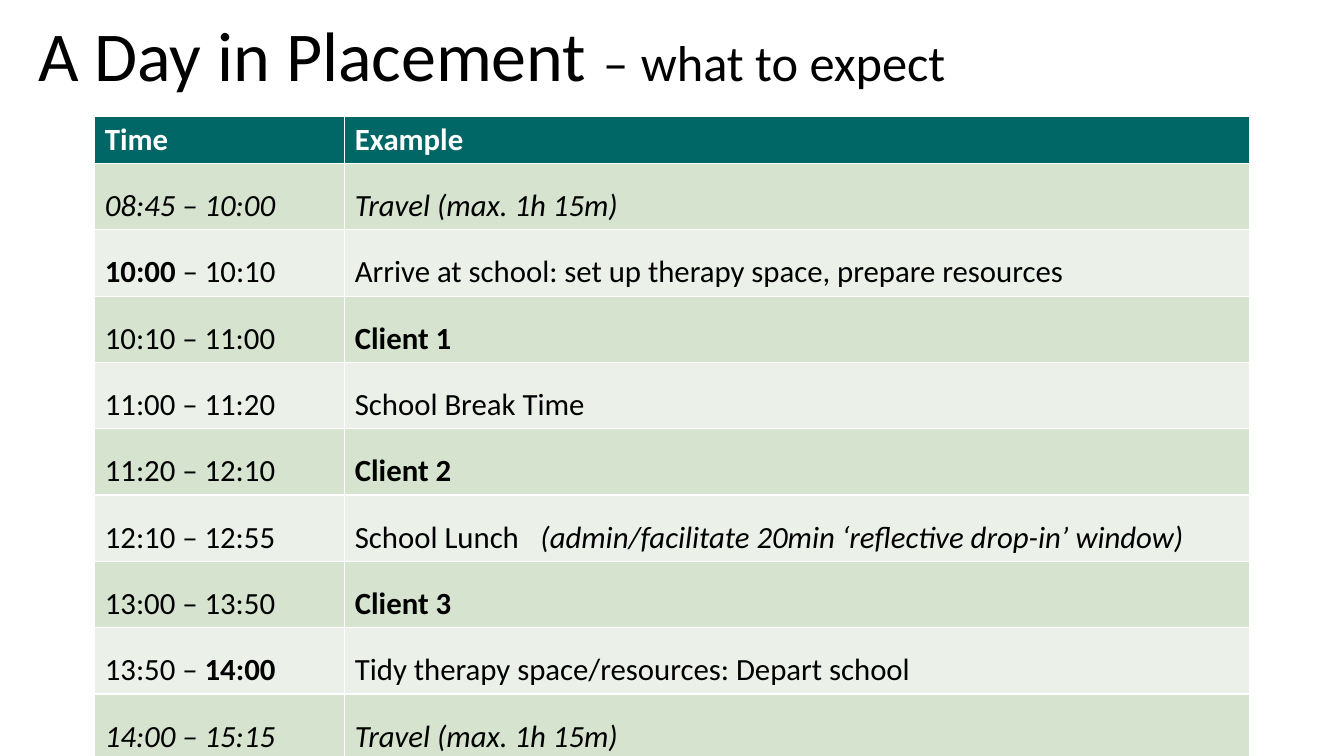
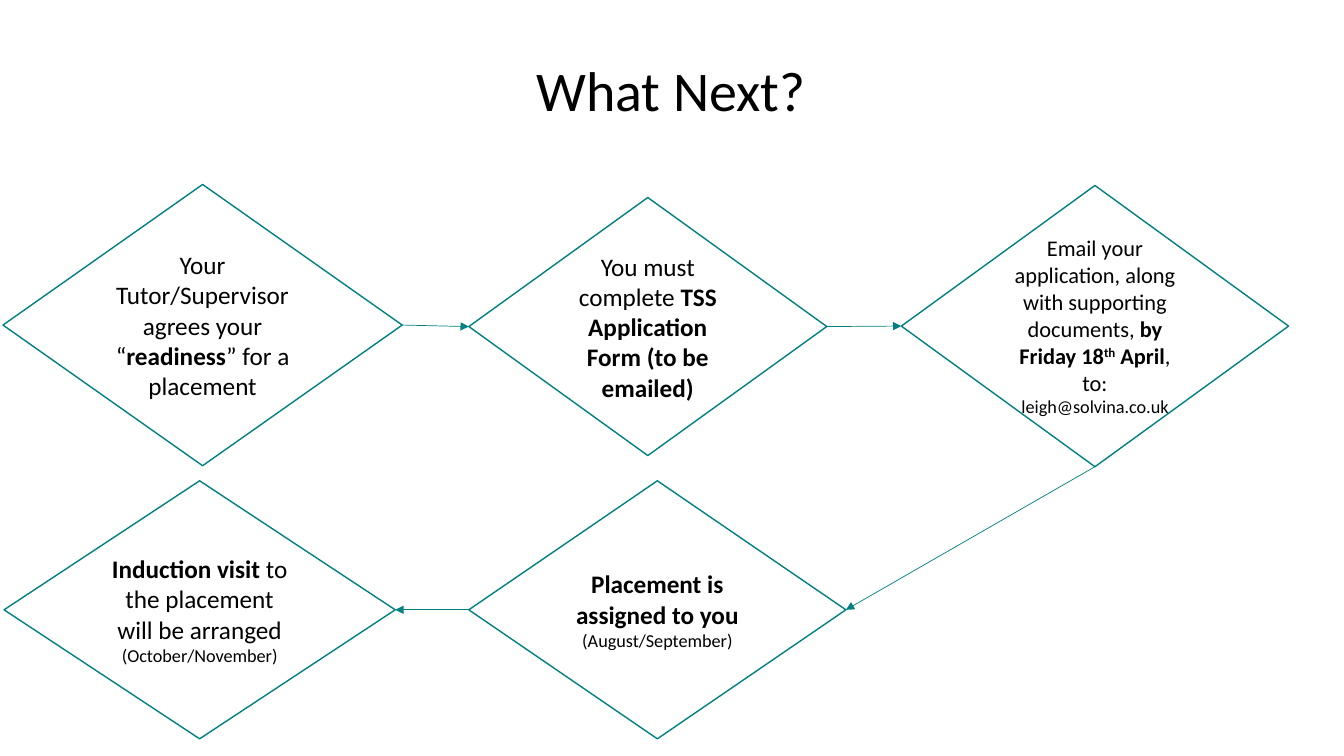
from typing import NamedTuple

import pptx
import pptx.dml.color
import pptx.enum.shapes
import pptx.enum.text
import pptx.oxml
import pptx.oxml.ns
import pptx.util
from lxml import etree

Inches = pptx.util.Inches
Pt = pptx.util.Pt
RGBColor = pptx.dml.color.RGBColor
qn = pptx.oxml.ns.qn
ALIGN = pptx.enum.text.PP_ALIGN
ANCHOR = pptx.enum.text.MSO_ANCHOR

FONT = "Calibri"
BLACK = RGBColor(0x00, 0x00, 0x00)
WHITE = RGBColor(0xFF, 0xFF, 0xFF)
HEADER_TEAL = RGBColor(0x00, 0x66, 0x66)
LINE_TEAL = RGBColor(0x00, 0x80, 0x80)
ROW_FILLS = (RGBColor(0xD5, 0xE3, 0xCF), RGBColor(0xEB, 0xF1, 0xE9))

BOLD = {"bold": True}
ITALIC = {"italic": True}
TITLE_ONLY = 5
TOP, LEFT, BOTTOM, RIGHT = range(4)

HEADINGS = ("Time", "Example")
TRAVEL = [("Travel (max. 1h 15m)", ITALIC)]
SCHEDULE = [
    ([("08:45 – 10:00", ITALIC)], TRAVEL),
    ([("10:00", BOLD), (" – 10:10", {})],
     [("Arrive at school: set up therapy space, prepare resources", {})]),
    ([("10:10 – 11:00", {})], [("Client 1", BOLD)]),
    ([("11:00 – 11:20", {})], [("School Break Time", {})]),
    ([("11:20 – 12:10", {})], [("Client 2", BOLD)]),
    ([("12:10 – 12:55", {})],
     [("School Lunch\t", {}),
      ("(admin/facilitate 20min ‘reflective drop-in’ window)", ITALIC)]),
    ([("13:00 – 13:50", {})], [("Client 3", BOLD)]),
    ([("13:50 – ", {}), ("14:00", BOLD)],
     [("Tidy therapy space/resources: Depart school", {})]),
    ([("14:00 – 15:15", ITALIC)], TRAVEL),
]
LUNCH_NOTE_TAB = 1.84


class Box(NamedTuple):
    left: float
    top: float
    width: float
    height: float

    def lengths(self):
        return [Inches(value) for value in self]


SMALL = {"size": Pt(13)}
SUPERSCRIPT = {"bold": True, "baseline": 30000}

# Each step: box, text size, paragraphs of runs
STEPS = [
    (Box(0.03, 1.83, 3.96, 2.79), 18,
     [[("Your Tutor/Supervisor agrees your “", {}), ("readiness", BOLD),
       ("” for a placement", {})]]),
    (Box(4.65, 1.96, 3.55, 2.56), 18,
     [[("You must complete ", {}),
       ("TSS Application Form (to be emailed)", BOLD)]]),
    (Box(8.94, 1.84, 3.84, 2.79), 16,
     [[("Email your application, along with supporting documents, ", {}),
       ("by Friday 18", BOLD), ("th", SUPERSCRIPT), (" April", BOLD),
       (", to: ", {}), ("leigh@solvina.co.uk", SMALL)]]),
    (Box(4.65, 4.77, 3.74, 2.56), 18,
     [[("Placement is assigned to you", BOLD)],
      [("(August/September)", SMALL)]]),
    (Box(0.04, 4.77, 3.88, 2.56), 18,
     [[("Induction visit ", BOLD), ("to the placement will be arranged", {})],
      [("(October/November)", SMALL)]]),
]
# Sides joined between each step and the next
ARROW_SIDES = [(RIGHT, LEFT), (RIGHT, LEFT), (BOTTOM, RIGHT), (LEFT, RIGHT)]


def add_runs(paragraph, runs, size, color=BLACK):
    for text, changes in runs:
        run = paragraph.add_run()
        run.text = text
        formats = {"name": FONT, "size": Pt(size), "bold": False,
                   "italic": False, **changes}
        baseline = formats.pop("baseline", None)
        for attribute, value in formats.items():
            setattr(run.font, attribute, value)
        run.font.color.rgb = color
        if baseline:
            run._r.get_or_add_rPr().set("baseline", str(baseline))


def add_titled_slide(deck, box, runs, align, line_spacing=1.0):
    slide = deck.slides.add_slide(deck.slide_layouts[TITLE_ONLY])
    title = slide.shapes.title
    title.left, title.top, title.width, title.height = box.lengths()
    frame = title.text_frame
    frame.word_wrap = True
    frame.auto_size = pptx.enum.text.MSO_AUTO_SIZE.NONE
    frame.vertical_anchor = ANCHOR.TOP
    heading = frame.paragraphs[0]
    heading.alignment = align
    heading.line_spacing = line_spacing
    add_runs(heading, runs, 40)
    return slide


def add_tab_stop(paragraph, position):
    tabs = etree.SubElement(paragraph._p.get_or_add_pPr(), qn("a:tabLst"))
    etree.SubElement(tabs, qn("a:tab"), pos=str(Inches(position)), algn="l")


def fill_cell(cell, runs, fill, color=BLACK, line_spacing=1.0):
    cell.fill.solid()
    cell.fill.fore_color.rgb = fill
    paragraph = cell.text_frame.paragraphs[0]
    paragraph.line_spacing = line_spacing
    if any("\t" in text for text, _ in runs):
        add_tab_stop(paragraph, LUNCH_NOTE_TAB)
    add_runs(paragraph, runs, 22, color)


def add_schedule(slide, box, time_width):
    table = slide.shapes.add_table(
        len(SCHEDULE) + 1, len(HEADINGS), *box.lengths()).table
    for column, width in zip(table.columns, (time_width, box.width - time_width)):
        column.width = Inches(width)
    for column, heading in enumerate(HEADINGS):
        fill_cell(table.cell(0, column), [(heading, BOLD)], HEADER_TEAL, WHITE)
    for row, entry in enumerate(SCHEDULE):
        for column, runs in enumerate(entry):
            fill_cell(table.cell(row + 1, column), runs, ROW_FILLS[row % 2],
                      line_spacing=1.5)


def add_step(slide, box, size, paragraphs):
    step = slide.shapes.add_shape(
        pptx.enum.shapes.MSO_SHAPE.FLOWCHART_DECISION, *box.lengths())
    step.shadow.inherit = False
    step.fill.solid()
    step.fill.fore_color.rgb = WHITE
    step.line.color.rgb = LINE_TEAL
    step.line.width = Pt(1)
    frame = step.text_frame
    frame.word_wrap = True
    frame.vertical_anchor = ANCHOR.MIDDLE
    for index, runs in enumerate(paragraphs):
        paragraph = frame.add_paragraph() if index else frame.paragraphs[0]
        paragraph.alignment = ALIGN.CENTER
        add_runs(paragraph, runs, size)
    return step


def add_arrow(slide, start, start_side, end, end_side):
    arrow = slide.shapes.add_connector(
        pptx.enum.shapes.MSO_CONNECTOR.STRAIGHT, 0, 0, 0, 0)
    arrow.begin_connect(start, start_side)
    arrow.end_connect(end, end_side)
    arrow.line.color.rgb = LINE_TEAL
    arrow.line.width = Pt(0.5)
    properties = arrow._element.spPr
    etree.SubElement(properties.find(qn("a:ln")), qn("a:tailEnd"), type="triangle")
    etree.SubElement(properties, qn("a:effectLst"))


def build_day_slide(deck):
    slide = add_titled_slide(
        deck, Box(0.28, 0.16, 12.5, 1.45),
        [("A Day in Placement ", {"size": Pt(50)}), ("–", {"size": Pt(36)}),
         (" ", {}), ("what to expect", {"size": Pt(36)})],
        ALIGN.LEFT, line_spacing=0.9)
    add_schedule(slide, Box(0.94, 1.15, 11.45, 4.1), time_width=2.48)


def build_next_steps_slide(deck):
    slide = add_titled_slide(deck, Box(1.52, 0.5, 10.27, 0.77),
                             [("What Next?", {})], ALIGN.CENTER)
    steps = [add_step(slide, *step) for step in STEPS]
    for start, end, (start_side, end_side) in zip(steps, steps[1:], ARROW_SIDES):
        add_arrow(slide, start, start_side, end, end_side)


def main():
    deck = pptx.Presentation()
    deck.slide_width = Inches(13.33)
    deck.slide_height = Inches(7.5)
    build_day_slide(deck)
    build_next_steps_slide(deck)
    deck.save("out.pptx")


if __name__ == "__main__":
    main()
